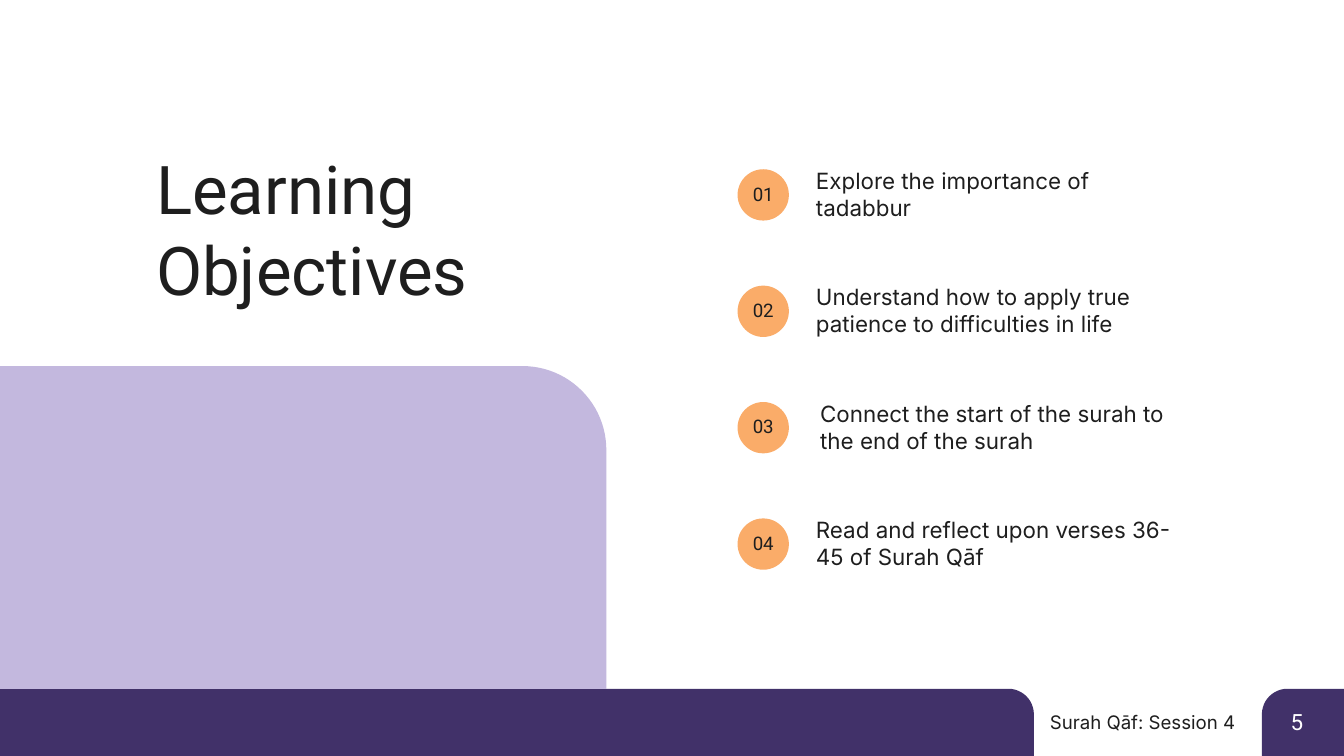
from dataclasses import dataclass

from lxml.etree import SubElement
from pptx import Presentation
from pptx.dml.color import RGBColor
from pptx.enum.shapes import MSO_SHAPE as Preset
from pptx.enum.text import MSO_ANCHOR as Anchor, MSO_AUTO_SIZE as AutoSize, PP_ALIGN as Align
from pptx.oxml.ns import qn
from pptx.util import Cm, Pt

INK, WHITE = "1E1E1E", "FFFFFF"
PURPLE, LILAC, ORANGE = "413169", "C3B8DE", "FAAC69"
FRAME_FORMAT = {
    "margin_left": Cm(0.13),
    "margin_right": Cm(0.13),
    "margin_top": Cm(0.05),
    "margin_bottom": Cm(0.05),
    "word_wrap": True,
    "auto_size": AutoSize.NONE,
    "vertical_anchor": Anchor.TOP,
}
FIRST_DISC_TOP = 3.2
ROW_PITCH = 2.2
DISC_LEFT, DISC_SIZE = 13.94, 0.97


@dataclass(frozen=True)
class Box:
    left: float
    top: float
    width: float
    height: float

    def lengths(self) -> list:
        return [Cm(v) for v in (self.left, self.top, self.width, self.height)]


@dataclass(frozen=True)
class Style:
    font: str
    size: int
    color: str = INK
    align: Align = Align.LEFT


@dataclass(frozen=True)
class Panel:
    box: Box
    color: str
    corner: float
    mirrored: bool = False


@dataclass(frozen=True)
class Objective:
    text: str
    left: float = 15.29
    width: float = 7.24


PANELS = [
    Panel(Box(23.85, 13.02, 1.55, 1.27), PURPLE, 0.38, mirrored=True),
    Panel(Box(0, 13.02, 19.54, 1.27), PURPLE, 0.38),
    Panel(Box(0, 6.92, 11.46, 6.1), LILAC, 0.26),
]
OBJECTIVES = [
    Objective("Explore the importance of tadabbur"),
    Objective("Understand how to apply true patience to difficulties in life"),
    Objective("Connect the start of the surah to the end of the surah", 15.37, 7.11),
    Objective("Read and reflect upon verses 36-45 of Surah Qāf"),
]


def rgb(color: str) -> RGBColor:
    return RGBColor.from_string(color)


def apply_format(target, values: dict) -> None:
    for name, value in values.items():
        setattr(target, name, value)


def write(shape, text: str, style: Style) -> None:
    frame = shape.text_frame
    apply_format(frame, FRAME_FORMAT)
    frame.text = text
    for paragraph in frame.paragraphs:
        if shape.is_placeholder:
            properties = paragraph._p.get_or_add_pPr()
            properties.set("marL", "0")
            properties.set("indent", "0")
            SubElement(properties, qn("a:buNone"))
        apply_format(paragraph, {"alignment": style.align, "space_before": Pt(0)})
        apply_format(paragraph.font, {"name": style.font, "size": Pt(style.size), "bold": False})
        paragraph.font.color.rgb = rgb(style.color)


def add_label(slide, box: Box, text: str, style: Style) -> None:
    write(slide.shapes.add_textbox(*box.lengths()), text, style)


def fill_placeholder(placeholder, box: Box, text: str, style: Style) -> None:
    edges = ("left", "top", "width", "height")
    apply_format(placeholder, dict(zip(edges, box.lengths())))
    write(placeholder, text, style)


def add_filled(slide, preset: Preset, box: Box, color: str):
    shape = slide.shapes.add_shape(preset, *box.lengths())
    shape.shadow.inherit = False
    shape.fill.solid()
    shape.fill.fore_color.rgb = rgb(color)
    shape.line.fill.background()
    return shape


def add_panel(slide, panel: Panel) -> None:
    shape = add_filled(slide, Preset.ROUND_1_RECTANGLE, panel.box, panel.color)
    shape.adjustments[0] = panel.corner
    if panel.mirrored:
        shape._element.spPr.get_or_add_xfrm().set("flipH", "1")


def add_objective(slide, row: int, objective: Objective) -> None:
    top = FIRST_DISC_TOP + row * ROW_PITCH
    add_filled(slide, Preset.OVAL, Box(DISC_LEFT, top, DISC_SIZE, DISC_SIZE), ORANGE)
    add_label(slide, Box(DISC_LEFT, top + 0.2, DISC_SIZE, 0.56), f"{row + 1:02}",
              Style("Roboto", 10, align=Align.CENTER))
    fill_placeholder(slide.placeholders[row + 1],
                     Box(objective.left, top - 0.09, objective.width, 1.14),
                     objective.text, Style("Inter", 12))


def main() -> None:
    deck = Presentation()
    apply_format(deck, {"slide_width": Cm(25.4), "slide_height": Cm(14.29)})
    comparison_layout = deck.slide_layouts[4]
    slide = deck.slides.add_slide(comparison_layout)

    for panel in PANELS:
        add_panel(slide, panel)
    add_label(slide, Box(18.87, 13.38, 4.6, 0.56), "Surah Qāf: Session 4",
              Style("Inter", 10, align=Align.RIGHT))
    add_label(slide, Box(24.26, 13.34, 0.76, 0.63), "5", Style("Roboto", 12, WHITE))
    fill_placeholder(slide.shapes.title, Box(2.82, 2.74, 10.44, 3.2),
                     "Learning\nObjectives", Style("Roboto", 36))
    for row, objective in enumerate(OBJECTIVES):
        add_objective(slide, row, objective)

    deck.save("out.pptx")


if __name__ == "__main__":
    main()
